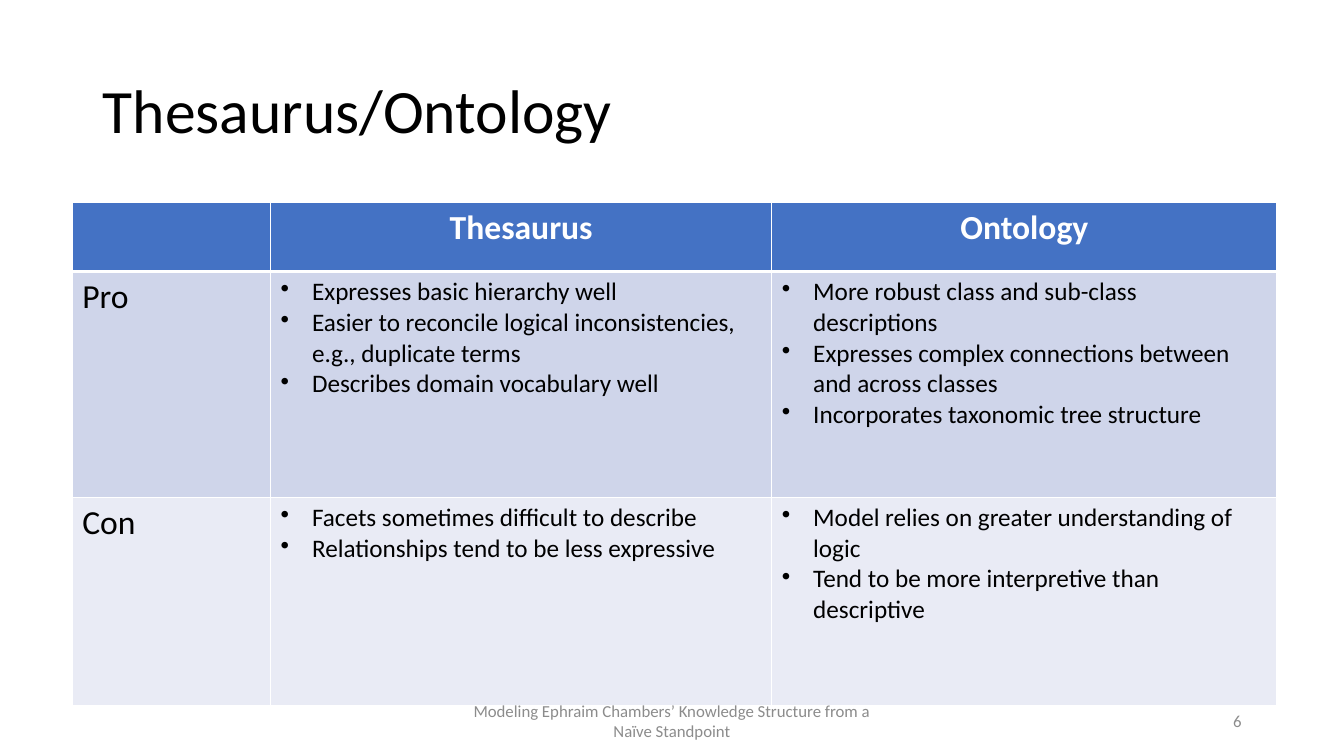
from dataclasses import dataclass

from lxml.etree import SubElement
from pptx import Presentation
from pptx.dml.color import RGBColor
from pptx.enum.text import MSO_ANCHOR, PP_ALIGN
from pptx.oxml.ns import qn
from pptx.slide import Slide
from pptx.table import _Cell
from pptx.text.text import TextFrame, _Paragraph
from pptx.util import Cm, Pt


@dataclass(frozen=True)
class Theme:
    font: str = "Calibri"
    ink: str = "000000"
    paper: str = "FFFFFF"
    header: str = "4472C4"
    muted: str = "8C8C8C"
    title_size: int = 44
    heading_size: int = 24
    body_size: int = 18
    footer_size: int = 12
    border: int = 1
    header_rule: int = 3


@dataclass(frozen=True)
class Label:
    text: str
    left: float
    top: float
    width: float
    height: float
    size: int
    color: str
    align: PP_ALIGN
    line_spacing: float = 1.0


@dataclass(frozen=True)
class Comparison:
    heading: str
    fill: str
    height: float
    thesaurus: tuple[str, ...]
    ontology: tuple[str, ...]


THEME = Theme()
FOOTER_TOP, FOOTER_HEIGHT = 17.65, 1.02

LABELS = (
    Label("Thesaurus/Ontology", 2.34, 1.02, 29.21, 3.68,
          THEME.title_size, THEME.ink, PP_ALIGN.LEFT, 0.9),
    Label("Modeling Ephraim Chambers’ Knowledge Structure from a Naïve Standpoint",
          11.22, FOOTER_TOP, 11.43, FOOTER_HEIGHT,
          THEME.footer_size, THEME.muted, PP_ALIGN.CENTER),
    Label("6", 23.92, FOOTER_TOP, 7.62, FOOTER_HEIGHT,
          THEME.footer_size, THEME.muted, PP_ALIGN.RIGHT),
)

TABLE_LEFT, TABLE_TOP = 1.82, 5.11
COLUMN_WIDTHS = (5.0, 12.63, 12.73)
HEADER_HEIGHT = 1.73
HEADINGS = ("", "Thesaurus", "Ontology")
COMPARISONS = (
    Comparison(
        "Pro", "CFD5EA", 5.69,
        ("Expresses basic hierarchy well",
         "Easier to reconcile logical inconsistencies, e.g., duplicate terms",
         "Describes domain vocabulary well"),
        ("More robust class and sub-class descriptions",
         "Expresses complex connections between and across classes",
         "Incorporates taxonomic tree structure"),
    ),
    Comparison(
        "Con", "E9EBF5", 5.26,
        ("Facets sometimes difficult to describe",
         "Relationships tend to be less expressive"),
        ("Model relies on greater understanding of logic",
         "Tend to be more interpretive than descriptive"),
    ),
)


def write(frame: TextFrame, text: str, size: int, color: str,
          align: PP_ALIGN = PP_ALIGN.LEFT, bold: bool = False) -> None:
    frame.text = text
    for paragraph in frame.paragraphs:
        paragraph.alignment = align
        for run in paragraph.runs:
            run.font.name = THEME.font
            run.font.size = Pt(size)
            run.font.bold = bold
            run.font.color.rgb = RGBColor.from_string(color)


def add_bullet(paragraph: _Paragraph) -> None:
    properties = paragraph._p.get_or_add_pPr()
    indent = Cm(0.79)
    properties.set("marL", str(indent))
    properties.set("indent", str(-indent))
    SubElement(properties, qn("a:buChar")).set("char", "•")


def paint_cell(cell: _Cell, fill: str, top: int, bottom: int) -> None:
    cell.fill.solid()
    cell.fill.fore_color.rgb = RGBColor.from_string(fill)
    properties = cell._tc.get_or_add_tcPr()
    edges = {"a:lnL": THEME.border, "a:lnR": THEME.border, "a:lnT": top, "a:lnB": bottom}
    for position, (edge, width) in enumerate(edges.items()):
        line = SubElement(properties, qn(edge))
        line.set("w", str(Pt(width)))
        paint = SubElement(line, qn("a:solidFill"))
        SubElement(paint, qn("a:srgbClr")).set("val", THEME.paper)
        properties.insert(position, line)


def add_label(slide: Slide, label: Label) -> None:
    box = slide.shapes.add_textbox(
        Cm(label.left), Cm(label.top), Cm(label.width), Cm(label.height))
    frame = box.text_frame
    frame.word_wrap = True
    frame.vertical_anchor = MSO_ANCHOR.MIDDLE
    write(frame, label.text, label.size, label.color, label.align)
    frame.paragraphs[0].line_spacing = label.line_spacing


def add_comparison_table(slide: Slide) -> None:
    heights = (HEADER_HEIGHT, *(comparison.height for comparison in COMPARISONS))
    table = slide.shapes.add_table(
        len(heights), len(COLUMN_WIDTHS), Cm(TABLE_LEFT), Cm(TABLE_TOP),
        Cm(sum(COLUMN_WIDTHS)), Cm(sum(heights))).table
    for column, width in zip(table.columns, COLUMN_WIDTHS):
        column.width = Cm(width)
    for row, height in zip(table.rows, heights):
        row.height = Cm(height)

    for column, heading in enumerate(HEADINGS):
        cell = table.cell(0, column)
        write(cell.text_frame, heading, THEME.heading_size, THEME.paper,
              PP_ALIGN.CENTER, True)
        paint_cell(cell, THEME.header, THEME.border, THEME.header_rule)

    for row, comparison in enumerate(COMPARISONS, start=1):
        top = THEME.header_rule if row == 1 else THEME.border
        heading_cell = table.cell(row, 0)
        write(heading_cell.text_frame, comparison.heading, THEME.heading_size, THEME.ink)
        paint_cell(heading_cell, comparison.fill, top, THEME.border)
        for column, points in enumerate((comparison.thesaurus, comparison.ontology), start=1):
            cell = table.cell(row, column)
            write(cell.text_frame, "\n".join(points), THEME.body_size, THEME.ink)
            for paragraph in cell.text_frame.paragraphs:
                add_bullet(paragraph)
            paint_cell(cell, comparison.fill, top, THEME.border)


def main() -> None:
    presentation = Presentation()
    presentation.slide_width = Cm(33.87)
    presentation.slide_height = Cm(19.05)
    slide = presentation.slides.add_slide(presentation.slide_layouts[6])
    slide.background.fill.solid()
    slide.background.fill.fore_color.rgb = RGBColor.from_string(THEME.paper)
    title, *footers = LABELS
    add_label(slide, title)
    add_comparison_table(slide)
    for footer in footers:
        add_label(slide, footer)
    presentation.save("out.pptx")


if __name__ == "__main__":
    main()
